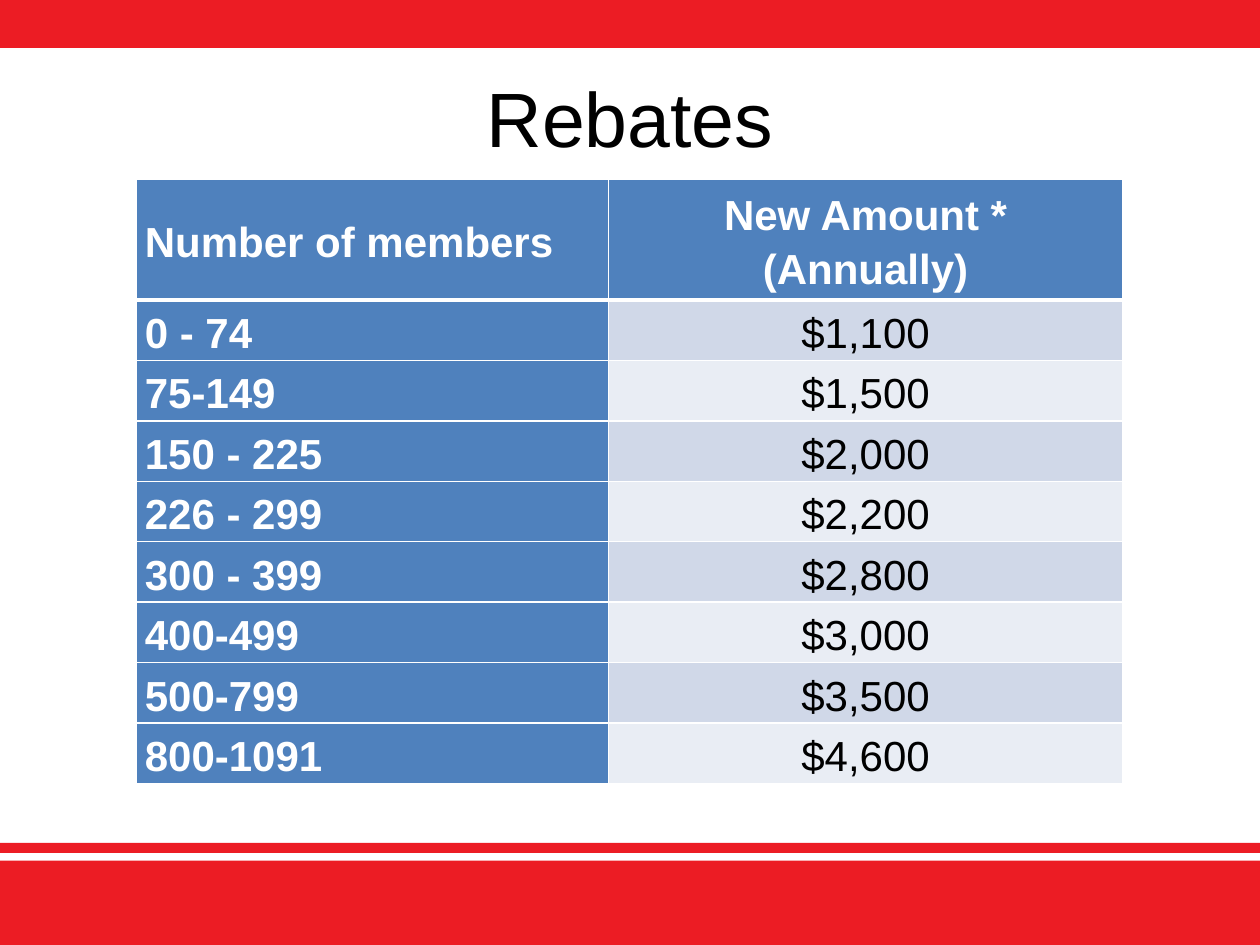
from lxml import etree
from pptx import Presentation
from pptx.dml.color import RGBColor
from pptx.enum import shapes, text
from pptx.oxml.ns import qn
from pptx.util import Inches, Pt

HUES = {
    "red": "EC1C24", "blue": "4F81BD", "odd": "D0D8E8",
    "even": "E9EDF4", "white": "FFFFFF", "black": "000000",
}
HEAD = [["Number of members"], ["New Amount *", "(Annually)"]]
RATES = [
    ("0 - 74", "$1,100"),
    ("75-149", "$1,500"),
    ("150 - 225", "$2,000"),
    ("226 - 299", "$2,200"),
    ("300 - 399", "$2,800"),
    ("400-499", "$3,000"),
    ("500-799", "$3,500"),
    ("800-1091", "$4,600"),
]


class Deck:
    face = "Arial"

    def __init__(self, slide):
        self.slide = slide

    def hue(self, name):
        return RGBColor.from_string(HUES[name])

    def run(self, para, words, size, hue, bold=False):
        run = para.add_run()
        run.text = words
        font = run.font
        font.name, font.size, font.bold = self.face, Pt(size), bold
        font.color.rgb = self.hue(hue)

    def band(self, top, high, edge=0):
        bar = self.slide.shapes.add_shape(
            shapes.MSO_SHAPE.RECTANGLE, 0, Inches(top), Inches(10), Inches(high))
        bar.shadow.inherit = False
        bar.fill.solid()
        bar.fill.fore_color.rgb = self.hue("red")
        if edge:
            bar.line.color.rgb = self.hue("red")
            bar.line.width = Pt(edge)
        else:
            bar.line.fill.background()

    def title(self, words):
        box = self.slide.shapes.title
        box.element.getparent().append(box.element)  # in front of the bands
        box.left, box.top = Inches(0.5), Inches(0.3)
        box.width, box.height = Inches(9), Inches(1.25)
        frame = box.text_frame
        frame.vertical_anchor = text.MSO_ANCHOR.MIDDLE
        para = frame.paragraphs[0]
        para.alignment = text.PP_ALIGN.CENTER
        self.run(para, words, 44, "black")

    def rule(self, cell, side, width):
        props = cell._tc.get_or_add_tcPr()
        line = etree.SubElement(props, qn(f"a:ln{side}"), w=str(Pt(width)))
        fill = etree.SubElement(line, qn("a:solidFill"))
        etree.SubElement(fill, qn("a:srgbClr"), val=HUES["white"])

    def cell(self, cell, lines, fill, hue, bold, align, top=1, base=1):
        for side, width in zip("LRTB", (1, 1, top, base)):
            self.rule(cell, side, width)
        cell.fill.solid()
        cell.fill.fore_color.rgb = self.hue(fill)
        cell.vertical_anchor = text.MSO_ANCHOR.MIDDLE
        cell.margin_left = cell.margin_right = Inches(0.07)
        cell.margin_top = cell.margin_bottom = 0
        frame = cell.text_frame
        for i, words in enumerate(lines):
            para = frame.add_paragraph() if i else frame.paragraphs[0]
            para.alignment, para.line_spacing = align, 1.15
            self.run(para, words, 24, hue, bold)

    def table(self, head, rows):
        grid = self.slide.shapes.add_table(
            len(rows) + 1, 2, Inches(1.08), Inches(1.42),
            Inches(7.83), Inches(4.82)).table
        for col, wide in zip(grid.columns, (3.75, 4.08)):
            col.width = Inches(wide)
        for i, row in enumerate(grid.rows):
            row.height = Inches(0.48 if i else 0.96)
        sides = (text.PP_ALIGN.LEFT, text.PP_ALIGN.CENTER)

        # Header row, with a thick rule below
        for c, lines in enumerate(head):
            self.cell(grid.cell(0, c), lines, "blue", "white", True, sides[c], base=3)

        # Member ranges and banded amounts
        for r, (span, sum_) in enumerate(rows, 1):
            top = 3 if r == 1 else 1
            shade = "odd" if r % 2 else "even"
            self.cell(grid.cell(r, 0), [span], "blue", "white", True, sides[0], top)
            self.cell(grid.cell(r, 1), [sum_], shade, "black", False, sides[1], top)


def main():
    prs = Presentation()
    prs.slide_width, prs.slide_height = Inches(10), Inches(7.5)
    deck = Deck(prs.slides.add_slide(prs.slide_layouts[5]))

    # Red bands
    deck.band(0, 0.37, edge=2)
    deck.band(6.83, 0.67)
    deck.band(6.69, 0.08)

    # Title and table
    deck.title("Rebates")
    deck.table(HEAD, RATES)
    prs.save("out.pptx")


if __name__ == "__main__":
    main()
